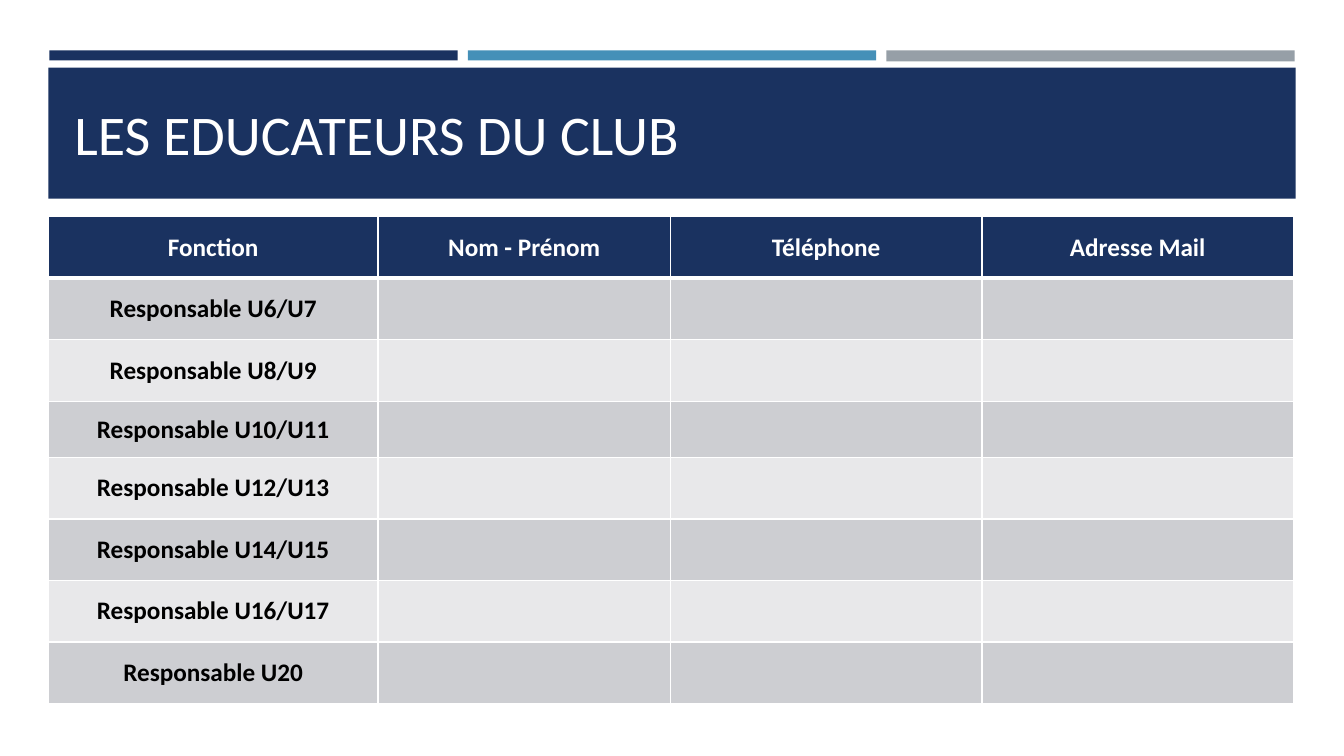
from pptx import Presentation
from pptx.dml.color import RGBColor
from pptx.enum.shapes import MSO_SHAPE
from pptx.enum.text import MSO_ANCHOR, PP_ALIGN
from pptx.util import Inches, Pt
from lxml.etree import SubElement
from pptx.oxml.ns import qn

NAVY = RGBColor(0x1A, 0x32, 0x60)
BLUE = RGBColor(0x45, 0x90, 0xB8)
GREY = RGBColor(0x96, 0x9F, 0xA7)
DARK = RGBColor(0xCD, 0xCE, 0xD2)
LIGHT = RGBColor(0xE8, 0xE8, 0xEA)
WHITE = RGBColor(0xFF, 0xFF, 0xFF)
BLACK = RGBColor(0, 0, 0)

LEFT = 0.48
HEADS = ["Fonction", "Nom - Prénom", "Téléphone", "Adresse Mail"]
TEAMS = ["U6/U7", "U8/U9", "U10/U11", "U12/U13", "U14/U15", "U16/U17", "U20"]
WIDTHS = [3.27, 2.9, 3.09, 3.09]
HEIGHTS = [0.61] * 3 + [0.56] + [0.61] * 4


def write(frame, text, form):
    frame.vertical_anchor = MSO_ANCHOR.MIDDLE
    para = frame.paragraphs[0]
    run = para.add_run()
    run.text = text
    for name, value in form.items():
        setattr(run.font, name, value)
    return para


def edge(cell, side, width):
    line = SubElement(cell._tc.get_or_add_tcPr(), qn("a:ln" + side), w=str(Pt(width)))
    fill = SubElement(line, qn("a:solidFill"))
    SubElement(fill, qn("a:srgbClr"), val=str(WHITE))


deck = Presentation()
deck.slide_width = Inches(13.33)
deck.slide_height = Inches(7.5)
slide = deck.slides.add_slide(deck.slide_layouts[6])

bars = [(LEFT + 0.01 + i * 4.15, 0.5, 4.05, tall, tint)
        for i, (tall, tint) in enumerate([(0.1, NAVY), (0.1, BLUE), (0.11, GREY)])]
for x, y, wide, tall, tint in bars + [(LEFT, 0.67, 12.37, 1.3, NAVY)]:
    bar = slide.shapes.add_shape(
        MSO_SHAPE.RECTANGLE, Inches(x), Inches(y), Inches(wide), Inches(tall))
    bar.shadow.inherit = False
    bar.fill.solid()
    bar.fill.fore_color.rgb = tint
    bar.line.fill.background()

title = slide.shapes.add_textbox(Inches(0.64), Inches(0.77), Inches(12.06), Inches(1.11))
title.text_frame.word_wrap = True
para = write(title.text_frame, "LES EDUCATEURS DU CLUB", {"size": Pt(40), "name": "Calibri"})
para.runs[0].font.color.rgb = WHITE

rows = [HEADS] + [["Responsable " + team, "", "", ""] for team in TEAMS]
table = slide.shapes.add_table(
    len(rows), len(HEADS), Inches(LEFT), Inches(2.15),
    Inches(sum(WIDTHS)), Inches(sum(HEIGHTS))).table
for col, wide in zip(table.columns, WIDTHS):
    col.width = Inches(wide)
for row, tall in zip(table.rows, HEIGHTS):
    row.height = Inches(tall)

form = {"size": Pt(18), "name": "Calibri", "bold": True}
for r, texts in enumerate(rows):
    for c, text in enumerate(texts):
        cell = table.cell(r, c)
        for side in "LRTB":
            thick = (r, side) in [(0, "B"), (1, "T")]
            edge(cell, side, 3 if thick else 1)
        cell.fill.solid()
        cell.fill.fore_color.rgb = NAVY if r == 0 else DARK if r % 2 else LIGHT
        cell.vertical_anchor = MSO_ANCHOR.MIDDLE
        if text:
            para = write(cell.text_frame, text, form)
            para.alignment = PP_ALIGN.CENTER
            para.runs[0].font.color.rgb = BLACK if r else WHITE

deck.save("out.pptx")
